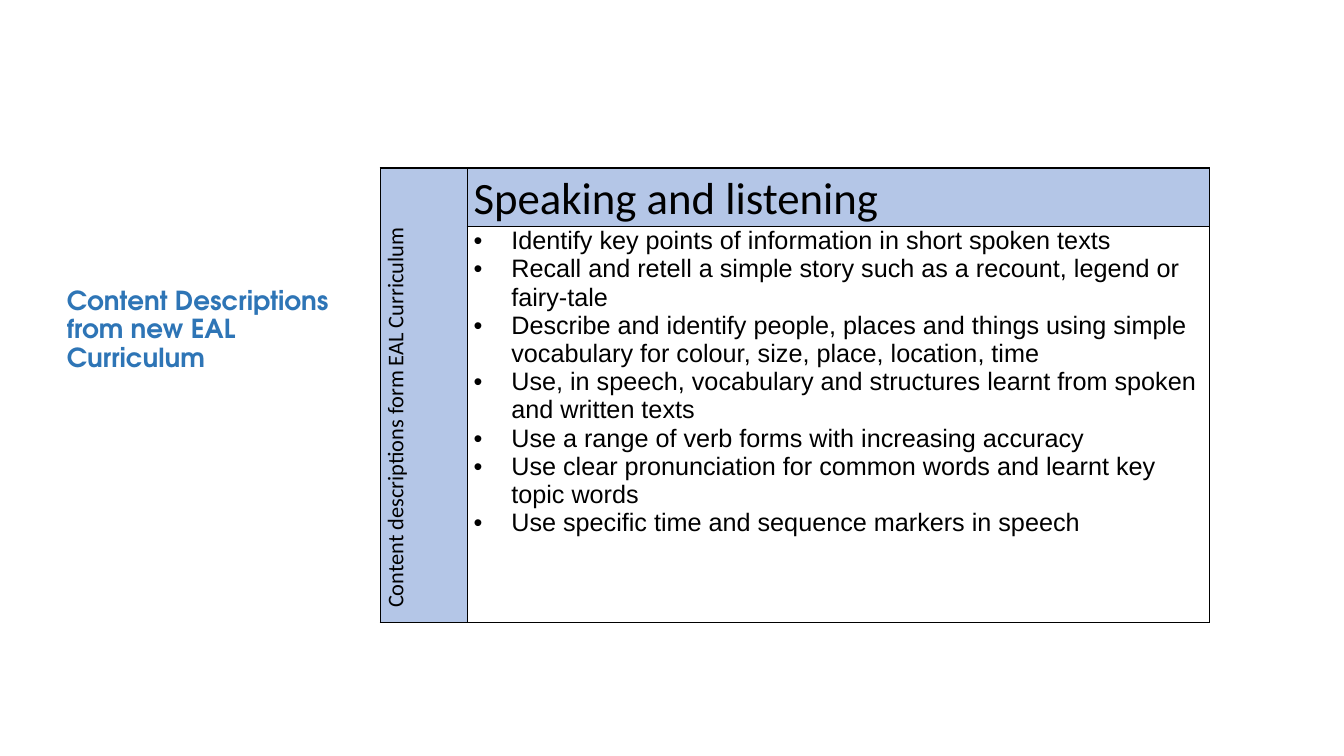
"""Build a slide with the speaking and listening content descriptions of the EAL curriculum."""
from lxml import etree
from pptx import Presentation
from pptx.dml.color import RGBColor
from pptx.enum.text import MSO_ANCHOR, MSO_AUTO_SIZE, PP_ALIGN
from pptx.oxml.ns import qn
from pptx.util import Pt

PX = 9525
BLUE = RGBColor(0x2E, 0x75, 0xB6)
PALE_BLUE = RGBColor(0xB4, 0xC6, 0xE7)
WHITE = RGBColor(0xFF, 0xFF, 0xFF)
BLACK = RGBColor(0x00, 0x00, 0x00)
LEFT = PP_ALIGN.LEFT
BOTTOM = MSO_ANCHOR.BOTTOM
NO_AUTOFIT = MSO_AUTO_SIZE.NONE

COLUMN_WIDTHS = [83, 707]
ROW_HEIGHTS = [56, 377]
BULLET_INDENT = 36
DESCRIPTIONS = [
    "Identify key points of information in short spoken texts",
    "Recall and retell a simple story such as a recount, legend or fairy-tale",
    "Describe and identify people, places and things using simple vocabulary for colour, size, place, location, time",
    "Use, in speech, vocabulary and structures learnt from spoken and written texts",
    "Use a range of verb forms with increasing accuracy",
    "Use clear pronunciation for common words and learnt key topic words",
    "Use specific time and sequence markers in speech",
]


def format_font(font, name, size, color):
    font.name = name
    font.size = Pt(size)
    font.color.rgb = color


def add_borders(cell):
    properties = cell._tc.get_or_add_tcPr()
    for side in ("a:lnL", "a:lnR", "a:lnT", "a:lnB"):
        line = etree.SubElement(properties, qn(side), w=str(Pt(1)))
        fill = etree.SubElement(line, qn("a:solidFill"))
        etree.SubElement(fill, qn("a:srgbClr"), val=str(BLACK))


presentation = Presentation()
presentation.slide_width = 1280 * PX
presentation.slide_height = 720 * PX
slide = presentation.slides.add_slide(presentation.slide_layouts[5])

title = slide.shapes.title
title.left, title.top, title.width, title.height = [n * PX for n in (54, 203, 270, 157)]
title_frame = title.text_frame
title_frame.text = "Content Descriptions from new EAL Curriculum"
title_frame.word_wrap = True
title_frame.auto_size = NO_AUTOFIT
title_frame.vertical_anchor = BOTTOM
title_paragraph = title_frame.paragraphs[0]
title_paragraph.alignment = LEFT
title_paragraph.line_spacing = 0.9
title_run = title_paragraph.runs[0]
format_font(title_run.font, "TeX Gyre Adventor", 18.7, BLUE)
title_run.font.bold = True

table = slide.shapes.add_table(
    2, 2, 362 * PX, 160 * PX, sum(COLUMN_WIDTHS) * PX, sum(ROW_HEIGHTS) * PX
).table
table.first_row = False
table.horz_banding = False
for column, width in zip(table.columns, COLUMN_WIDTHS):
    column.width = width * PX
for row, height in zip(table.rows, ROW_HEIGHTS):
    row.height = height * PX

for cell in table.iter_cells():
    cell.margin_left = cell.margin_right = 6 * PX
    cell.margin_top = cell.margin_bottom = 0
    add_borders(cell)
    cell.fill.solid()
    cell.fill.fore_color.rgb = PALE_BLUE

side_cell = table.cell(0, 0)
heading_cell = table.cell(0, 1)
list_cell = table.cell(1, 1)
side_cell.merge(table.cell(1, 0))
side_cell._tc.get_or_add_tcPr().set("vert", "vert270")
list_cell.fill.fore_color.rgb = WHITE

for cell, text, size in (
    (side_cell, "Content descriptions form EAL Curriculum", 16),
    (heading_cell, "Speaking and listening", 32),
):
    cell.text_frame.text = text
    paragraph = cell.text_frame.paragraphs[0]
    paragraph.line_spacing = 1.07
    format_font(paragraph.runs[0].font, "Calibri", size, BLACK)
side_cell.text_frame.paragraphs[0]._p.get_or_add_pPr().set("marL", str(8 * PX))

list_cell.text_frame.text = "\n".join(DESCRIPTIONS)
for paragraph in list_cell.text_frame.paragraphs:
    properties = paragraph._p.get_or_add_pPr()
    properties.set("marL", str(BULLET_INDENT * PX))
    properties.set("indent", str(-BULLET_INDENT * PX))
    etree.SubElement(properties, qn("a:buFont"), typeface="Arial")
    etree.SubElement(properties, qn("a:buChar"), char="•")
    format_font(paragraph.runs[0].font, "Arial", 18, BLACK)

presentation.save("out.pptx")
